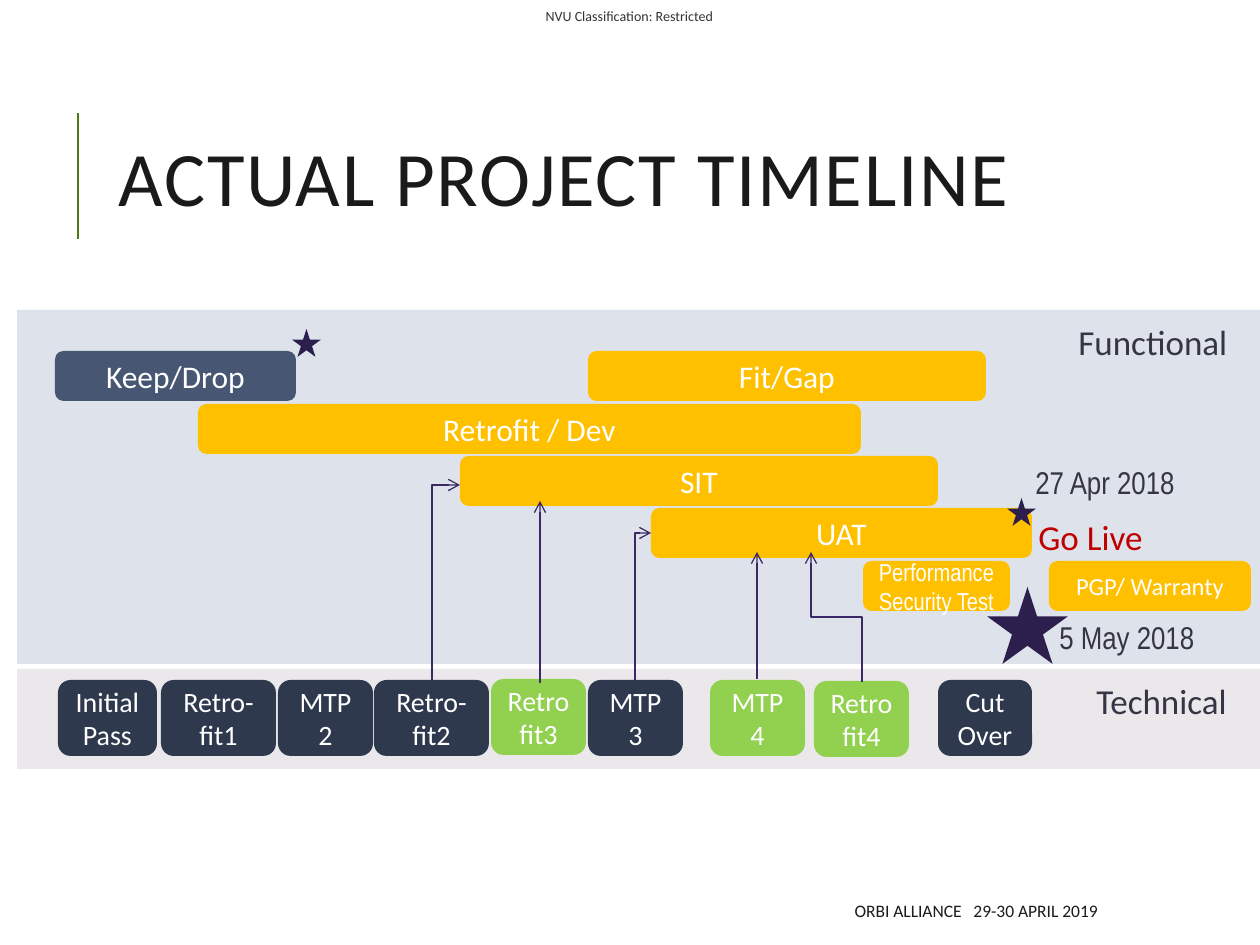
from dataclasses import dataclass

from lxml import etree
from pptx import Presentation
from pptx.dml.color import RGBColor
from pptx.enum.shapes import MSO_CONNECTOR, MSO_SHAPE
from pptx.enum.text import MSO_ANCHOR, MSO_AUTO_SIZE, PP_ALIGN
from pptx.oxml.ns import qn
from pptx.util import Emu, Pt

RECT, ROUNDED, STAR = MSO_SHAPE.RECTANGLE, MSO_SHAPE.ROUNDED_RECTANGLE, MSO_SHAPE.STAR_5_POINT
STRAIGHT, ELBOW = MSO_CONNECTOR.STRAIGHT, MSO_CONNECTOR.ELBOW
LEFT, CENTER, RIGHT = PP_ALIGN.LEFT, PP_ALIGN.CENTER, PP_ALIGN.RIGHT
TOP, MIDDLE = MSO_ANCHOR.TOP, MSO_ANCHOR.MIDDLE
GROW = MSO_AUTO_SIZE.SHAPE_TO_FIT_TEXT

EMU_PER_PX = 914400 / 126
SLIDE_W, SLIDE_H = 1260, 945
BAND_X = 17
BAR_H, STEP_H, STEP_Y = 50, 76, 680


@dataclass(frozen=True)
class Theme:
    body: str = "Calibri"
    narrow: str = "Arial Narrow"
    ink: str = "1A1A1A"
    marking: str = "333333"
    label: str = "373545"
    alert: str = "C00000"
    white: str = "FFFFFF"
    accent: str = "4E7817"
    functional: str = "DEE3EB"
    technical: str = "EAE8EA"
    done: str = "465673"
    active: str = "FFC000"
    step: str = "2E394D"
    extra: str = "92D050"
    star: str = "2C1E4D"
    arrow: str = "3B2867"
    title_pt: int = 44
    heading_pt: int = 20
    bar_pt: int = 18
    step_pt: int = 16
    small_pt: int = 14
    footer_pt: int = 10
    marking_pt: int = 8


THEME = Theme()


def px(length):
    return Emu(round(length * EMU_PER_PX))


def rgb(color):
    return RGBColor.from_string(color)


def apply(target, values):
    for name, value in values.items():
        setattr(target, name, value)


def write(shape, text, size, color, font=THEME.body, align=CENTER, **frame_format):
    frame = shape.text_frame
    apply(frame, {"word_wrap": True, "vertical_anchor": MIDDLE, **frame_format})
    paragraph = frame.paragraphs[0]
    paragraph.alignment = align
    run = paragraph.add_run()
    run.text = text
    apply(run.font, {"name": font, "size": Pt(size)})
    run.font.color.rgb = rgb(color)
    return paragraph


def add_text(slide, box, *text_style, **frame_format):
    textbox = slide.shapes.add_textbox(*map(px, box))
    return write(textbox, *text_style, **frame_format)


def add_label(slide, box, text, size, color, font=THEME.body):
    add_text(slide, box, text, size, color, font, LEFT,
             word_wrap=False, vertical_anchor=TOP, auto_size=GROW)


def add_filled(slide, preset, box, fill):
    shape = slide.shapes.add_shape(preset, *map(px, box))
    shape.shadow.inherit = False
    shape.fill.solid()
    shape.fill.fore_color.rgb = rgb(fill)
    shape.line.fill.background()
    return shape


def add_line(slide, kind, start, end, color, width):
    line = slide.shapes.add_connector(kind, *map(px, (*start, *end)))
    line.line.color.rgb = rgb(color)
    line.line.width = Pt(width)
    etree.SubElement(line._element.spPr, qn("a:effectLst"))
    return line


def add_arrow(slide, start, end):
    """Upward arrow: straight, one bend to the right, or two bends to the left."""
    (x0, y0), (x1, y1) = start, end
    if x0 == x1:
        arrow = add_line(slide, STRAIGHT, start, end, THEME.arrow, 0.75)
    else:
        # An elbow runs sideways, so lay it flat around its centre and turn it
        cx, cy = (x0 + x1) / 2, (y0 + y1) / 2
        near, far = cx - (y0 - y1) / 2, cx + (y0 - y1) / 2
        high, low = cy - abs(x1 - x0) / 2, cy + abs(x1 - x0) / 2
        to_right = x1 > x0
        if to_right:
            near, far = far, near
        arrow = add_line(slide, ELBOW, (near, low), (far, high), THEME.arrow, 0.75)
        properties = arrow._element.spPr
        properties.find(qn("a:xfrm")).set("rot", str((90 if to_right else 270) * 60000))
        if to_right:
            properties.find(qn("a:prstGeom")).set("prst", "bentConnector2")
    outline = arrow.line._get_or_add_ln()
    etree.SubElement(outline, qn("a:tailEnd"), type="arrow")


def add_heading(slide):
    add_line(slide, STRAIGHT, (78, 239), (78, 113), THEME.accent, 1.5)
    add_text(slide, (527, 0, 205, 31), "NVU Classification: Restricted",
             THEME.marking_pt, THEME.marking, auto_size=GROW,
             margin_left=0, margin_right=0, margin_top=0, margin_bottom=0)
    title = add_text(slide, (106, 81, 1004, 207), "ACTUAL PROJECT TIMELINE",
                     THEME.title_pt, THEME.ink, align=LEFT)
    title.line_spacing = 0.8
    title.runs[0].font._element.set("spc", "100")
    add_text(slide, (500, 892, 610, 38), "ORBI ALLIANCE   29-30 APRIL 2019",
             THEME.footer_pt, THEME.ink, align=RIGHT)


def add_bars(slide):
    t = THEME
    bars = [  # text, x, y, width, fill, size, font
        ("Keep/Drop", 55, 351, 241, t.done, t.bar_pt, t.body),
        ("Fit/Gap", 588, 351, 398, t.active, t.bar_pt, t.body),
        ("Retrofit / Dev", 198, 404, 663, t.active, t.bar_pt, t.body),
        ("SIT", 460, 456, 478, t.active, t.bar_pt, t.body),
        ("UAT", 651, 508, 381, t.active, t.bar_pt, t.body),
        ("Performance Security Test", 863, 561, 147, t.active, t.small_pt, t.narrow),
        ("PGP/ Warranty", 1049, 561, 202, t.active, t.small_pt, t.body),
    ]
    for text, x, y, width, fill, size, font in bars:
        bar = add_filled(slide, ROUNDED, (x, y, width, BAR_H), fill)
        write(bar, text, size, t.white, font)


def add_steps(slide):
    t = THEME
    steps = [  # text, x, width, fill, vertical shift
        ("Initial Pass", 58, 99, t.step, 0),
        ("Retro-fit1", 161, 115, t.step, 0),
        ("MTP 2", 278, 95, t.step, 0),
        ("Retro-fit2", 374, 115, t.step, 0),
        ("Retrofit3", 491, 95, t.extra, -1),
        ("MTP 3", 588, 95, t.step, 0),
        ("MTP 4", 710, 95, t.extra, 0),
        ("Retrofit4", 814, 95, t.extra, 1),
        ("Cut Over", 938, 94, t.step, 0),
    ]
    for text, x, width, fill, shift in steps:
        step = add_filled(slide, ROUNDED, (x, STEP_Y + shift, width, STEP_H), fill)
        write(step, text, t.step_pt, t.white)


def add_milestones(slide):
    t = THEME
    for box in ((292, 329, 29, 28), (1007, 498, 29, 28), (987, 587, 81, 77)):
        add_filled(slide, STAR, box, t.star)
    add_label(slide, (1023, 457, 166, 50), "27 Apr 2018", t.bar_pt, t.label, t.narrow)
    add_label(slide, (1026, 509, 147, 55), "Go Live", t.heading_pt, t.alert)
    add_label(slide, (1047, 612, 163, 50), "5 May 2018", t.bar_pt, t.label, t.narrow)


def main():
    deck = Presentation()
    apply(deck, {"slide_width": px(SLIDE_W), "slide_height": px(SLIDE_H)})
    slide = deck.slides.add_slide(deck.slide_layouts[6])
    add_heading(slide)

    # Bands with their names
    band_w = SLIDE_W - BAND_X
    add_filled(slide, RECT, (BAND_X, 310, band_w, 354), THEME.functional)
    add_filled(slide, RECT, (BAND_X, 669, band_w, 100), THEME.technical)
    add_label(slide, (1066, 314, 189, 55), "Functional", THEME.heading_pt, THEME.label)
    add_label(slide, (1084, 673, 173, 55), "Technical", THEME.heading_pt, THEME.label)

    # Work in each band
    add_bars(slide)
    add_steps(slide)

    # Technical steps feeding the tests
    for start, end in (
        ((432, 680), (460, 485)),
        ((540, 683), (540, 501)),
        ((635, 680), (651, 533)),
        ((757, 679), (757, 552)),
        ((862, 682), (811, 552)),
    ):
        add_arrow(slide, start, end)

    add_milestones(slide)
    deck.save("out.pptx")


if __name__ == "__main__":
    main()
